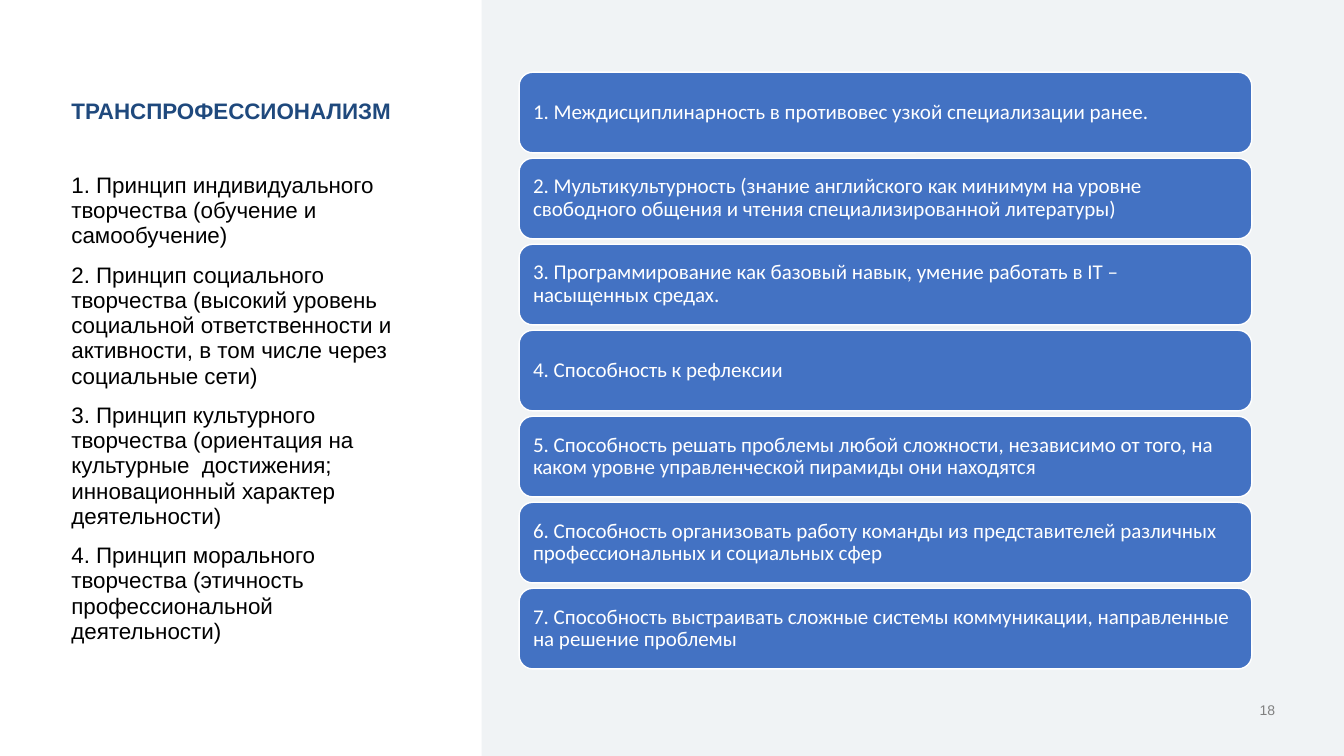
from pptx import Presentation
from pptx.dml.color import RGBColor
from pptx.enum.shapes import MSO_SHAPE
from pptx.enum.text import MSO_ANCHOR, PP_ALIGN
from pptx.util import Pt

RECTANGLE = MSO_SHAPE.RECTANGLE
ROUNDED = MSO_SHAPE.ROUNDED_RECTANGLE
TOP, MIDDLE, BOTTOM = MSO_ANCHOR.TOP, MSO_ANCHOR.MIDDLE, MSO_ANCHOR.BOTTOM
LEFT, RIGHT = PP_ALIGN.LEFT, PP_ALIGN.RIGHT

COLORS = {
    "panel": "F0F3F5",
    "card": "4372C3",
    "white": "FFFFFF",
    "heading": "1F497D",
    "body": "000000",
    "number": "808080",
}

HEADING = "ТРАНСПРОФЕССИОНАЛИЗМ"
PRINCIPLES = [
    "1. Принцип индивидуального творчества (обучение и самообучение)",
    "2. Принцип социального творчества (высокий уровень социальной "
    "ответственности и активности, в том числе через социальные сети)",
    "3. Принцип культурного творчества (ориентация на культурные  достижения; "
    "инновационный характер деятельности)",
    "4. Принцип морального творчества (этичность профессиональной деятельности)",
]
SKILLS = [
    "1. Междисциплинарность в противовес узкой специализации ранее.",
    "2. Мультикультурность (знание английского как минимум на уровне "
    "свободного общения и чтения специализированной литературы)",
    "3. Программирование как базовый навык, умение работать в IT – насыщенных средах.",
    "4. Способность к рефлексии",
    "5. Способность решать проблемы любой сложности, независимо от того, "
    "на каком уровне управленческой пирамиды они находятся",
    "6. Способность организовать работу команды из представителей различных "
    "профессиональных и социальных сфер",
    "7. Способность выстраивать сложные системы коммуникации, направленные "
    "на решение проблемы",
]
CARD_TOP, CARD_PITCH = 51.6, 61.44


def color(name):
    return RGBColor.from_string(COLORS[name])


def add_block(page, kind, left, top, width, height, fill):
    """Add a filled shape without outline or shadow."""
    block = page.shapes.add_shape(kind, Pt(left), Pt(top), Pt(width), Pt(height))
    block.shadow.inherit = False
    block.fill.solid()
    block.fill.fore_color.rgb = color(fill)
    block.line.fill.background()
    return block


def set_frame(box, anchor, across, above, below):
    """Turn on wrapping and set the anchor and inner margins."""
    frame = box.text_frame
    frame.word_wrap = True
    frame.vertical_anchor = anchor
    frame.margin_left = frame.margin_right = Pt(across)
    frame.margin_top, frame.margin_bottom = Pt(above), Pt(below)
    return frame


def style(para, size, ink, font="Arial", bold=False, align=LEFT, spacing=None, before=0):
    para.alignment = align
    para.line_spacing = spacing
    para.space_before = Pt(before)
    para.font.size = Pt(size)
    for span in para.runs:
        span.font.name = font
        span.font.size = Pt(size)
        span.font.bold = bold
        span.font.color.rgb = color(ink)


def add_card(page, top, text):
    card = add_block(page, ROUNDED, 370.8, top, 523.4, 57.6, "card")
    card.adjustments[0] = 0.17
    card.line.color.rgb = color("white")
    card.line.width = Pt(1)
    frame = set_frame(card, MIDDLE, 7.2, 7.2, 7.2)
    frame.text = text
    style(frame.paragraphs[0], 15, "white", font="Calibri", spacing=0.9)


def add_principles(page):
    box = page.shapes.add_textbox(Pt(43.9), Pt(49.7), Pt(251.3), Pt(440.6))
    frame = set_frame(box, TOP, 7.2, 21, 3.6)
    frame.text = "\n".join([HEADING, *PRINCIPLES])
    heading, first, *others = frame.paragraphs
    style(heading, 16, "heading", bold=True, spacing=0.94)
    style(first, 16, "body", spacing=0.94, before=35)
    for para in others:
        style(para, 16, "body", spacing=0.94, before=10)


def add_page_number(page, number):
    box = page.shapes.add_textbox(Pt(887), Pt(485.3), Pt(23.8), Pt(28.1))
    frame = set_frame(box, BOTTOM, 0, 0, 0)
    frame.text = number
    style(frame.paragraphs[0], 10, "number", align=RIGHT)


def main():
    deck = Presentation()
    deck.slide_width, deck.slide_height = Pt(960), Pt(540)
    page = deck.slides.add_slide(deck.slide_layouts[6])
    add_block(page, RECTANGLE, 344, 0, 616, 540, "panel")
    add_page_number(page, "18")
    for row, skill in enumerate(SKILLS):
        add_card(page, CARD_TOP + row * CARD_PITCH, skill)
    add_principles(page)
    deck.save("out.pptx")


if __name__ == "__main__":
    main()
